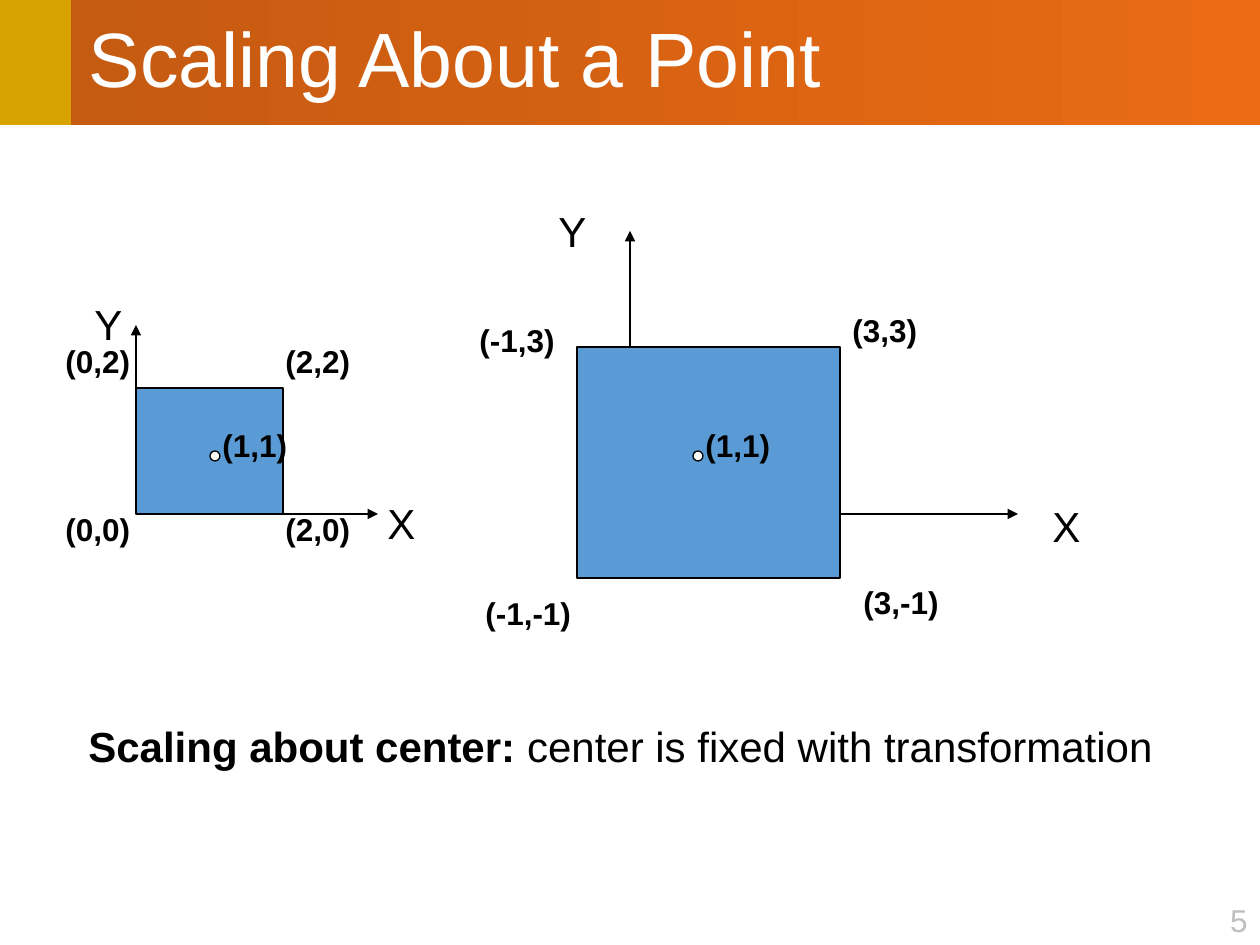
from pptx import Presentation
from pptx import util as u
from pptx.dml.color import RGBColor
from pptx.enum import shapes, text
from pptx.oxml.ns import qn
from lxml import etree

PX = u.Inches(1) / 126
FONT = "Arial"
COLORS = {
    "gold": "D6A300", "title_start": "C55A11", "title_end": "EA6B14",
    "square": "5B9BD5", "white": "FFFFFF", "black": "000000", "number": "BFBFBF",
}
LABEL_HEIGHT = 50
AXIS_NAME_SIZE = (55, 63)
DOT_SIZE = 10
DOT_TOP = 451
ORIGIN_Y = 514

# Boxes are left, top, width, height; labels are wording, left, top, width.
FIGURES = [
    {
        "origin_x": 136, "axis_top": 325, "axis_right": 378,
        "x_name": (375, 491), "y_name": (82, 292),
        "square": (136, 388, 147, 126), "dot_left": 210,
        "corners": [("(2,0)", 273, 504, 91), ("(2,2)", 273, 336, 91),
                    ("(0,2)", 53, 336, 91), ("(0,0)", 53, 504, 91)],
    },
    {
        "origin_x": 630, "axis_top": 231, "axis_right": 1018,
        "x_name": (1040, 494), "y_name": (546, 199),
        "square": (577, 347, 263, 231), "dot_left": 693,
        "corners": [("(3,-1)", 851, 577, 101), ("(3,3)", 840, 305, 91),
                    ("(-1,3)", 467, 315, 101), ("(-1,-1)", 473, 588, 111)],
    },
]


def px(*lengths):
    return [u.Emu(round(length * PX)) for length in lengths]


def color(name):
    return RGBColor.from_string(COLORS[name])


def style_font(font, size, color_name="black", bold=False):
    font.name = FONT
    font.size = u.Pt(size)
    font.bold = bold
    font.color.rgb = color(color_name)


def add_box(slide, kind, box, fill, outlined=True):
    shape = slide.shapes.add_shape(kind, *px(*box))
    shape.shadow.inherit = False
    shape.fill.solid()
    shape.fill.fore_color.rgb = color(fill)
    if outlined:
        shape.line.color.rgb = color("black")
        shape.line.width = u.Pt(0.75)
    else:
        shape.line.fill.background()
    return shape


def add_label(slide, wording, box, size, color_name="black", bold=False):
    label = slide.shapes.add_textbox(*px(*box))
    frame = label.text_frame
    frame.word_wrap = False
    frame.auto_size = text.MSO_AUTO_SIZE.SHAPE_TO_FIT_TEXT
    paragraph = frame.paragraphs[0]
    paragraph.text = wording
    style_font(paragraph.font, size, color_name, bold)
    return paragraph


def add_arrow(slide, start, end):
    arrow = slide.shapes.add_connector(
        shapes.MSO_CONNECTOR.STRAIGHT, *px(*start, *end))
    arrow.line.color.rgb = color("black")
    arrow.line.width = u.Pt(0.75)
    etree.SubElement(arrow.line._get_or_add_ln(), qn("a:tailEnd"), type="triangle")
    etree.SubElement(arrow._element.spPr, qn("a:effectLst"))


def add_title(slide, wording):
    bar = add_box(slide, shapes.MSO_SHAPE.RECTANGLE, (71, 0, 1189, 125),
                  "title_start", outlined=False)
    bar.fill.gradient()
    bar.fill.gradient_angle = 0
    for stop, name in zip(bar.fill.gradient_stops, ("title_start", "title_end")):
        stop.color.rgb = color(name)
    frame = bar.text_frame
    frame.margin_left = px(18)[0]
    frame.vertical_anchor = text.MSO_ANCHOR.MIDDLE
    paragraph = frame.paragraphs[0]
    paragraph.text = wording
    paragraph.alignment = text.PP_ALIGN.LEFT
    paragraph.line_spacing = 0.9
    style_font(paragraph.font, 44, "white")


def add_figure(slide, figure):
    # Axes and their names
    origin = (figure["origin_x"], ORIGIN_Y)
    add_arrow(slide, origin, (figure["origin_x"], figure["axis_top"]))
    add_arrow(slide, origin, (figure["axis_right"], ORIGIN_Y))
    add_label(slide, "X", figure["x_name"] + AXIS_NAME_SIZE, 24)
    add_label(slide, "Y", figure["y_name"] + AXIS_NAME_SIZE, 24)

    # Square and its corners
    add_box(slide, shapes.MSO_SHAPE.RECTANGLE, figure["square"], "square")
    for wording, left, top, width in figure["corners"]:
        add_label(slide, wording, (left, top, width, LABEL_HEIGHT), 18, bold=True)

    # Fixed center point
    left = figure["dot_left"]
    add_box(slide, shapes.MSO_SHAPE.OVAL, (left, DOT_TOP, DOT_SIZE, DOT_SIZE), "white")
    add_label(slide, "(1,1)", (left, 420, 91, LABEL_HEIGHT), 18, bold=True)


def add_caption(slide, heading, explanation):
    paragraph = add_label(slide, heading, (76, 714, 1110, 63), 24)
    paragraph.runs[0].font.bold = True
    paragraph.add_run().text = explanation


def main():
    presentation = Presentation()
    presentation.slide_width, presentation.slide_height = px(1260, 945)
    slide = presentation.slides.add_slide(presentation.slide_layouts[6])

    # Header and slide number
    add_box(slide, shapes.MSO_SHAPE.RECTANGLE, (0, 0, 71, 125), "gold", outlined=False)
    number = add_label(slide, "5", (1196, 895, 64, LABEL_HEIGHT), 18, "number")
    number.alignment = text.PP_ALIGN.RIGHT
    add_title(slide, "Scaling About a Point")

    # Square before and after scaling
    for figure in FIGURES:
        add_figure(slide, figure)

    add_caption(slide, "Scaling about center:", " center is fixed with transformation")
    presentation.save("out.pptx")


if __name__ == "__main__":
    main()
